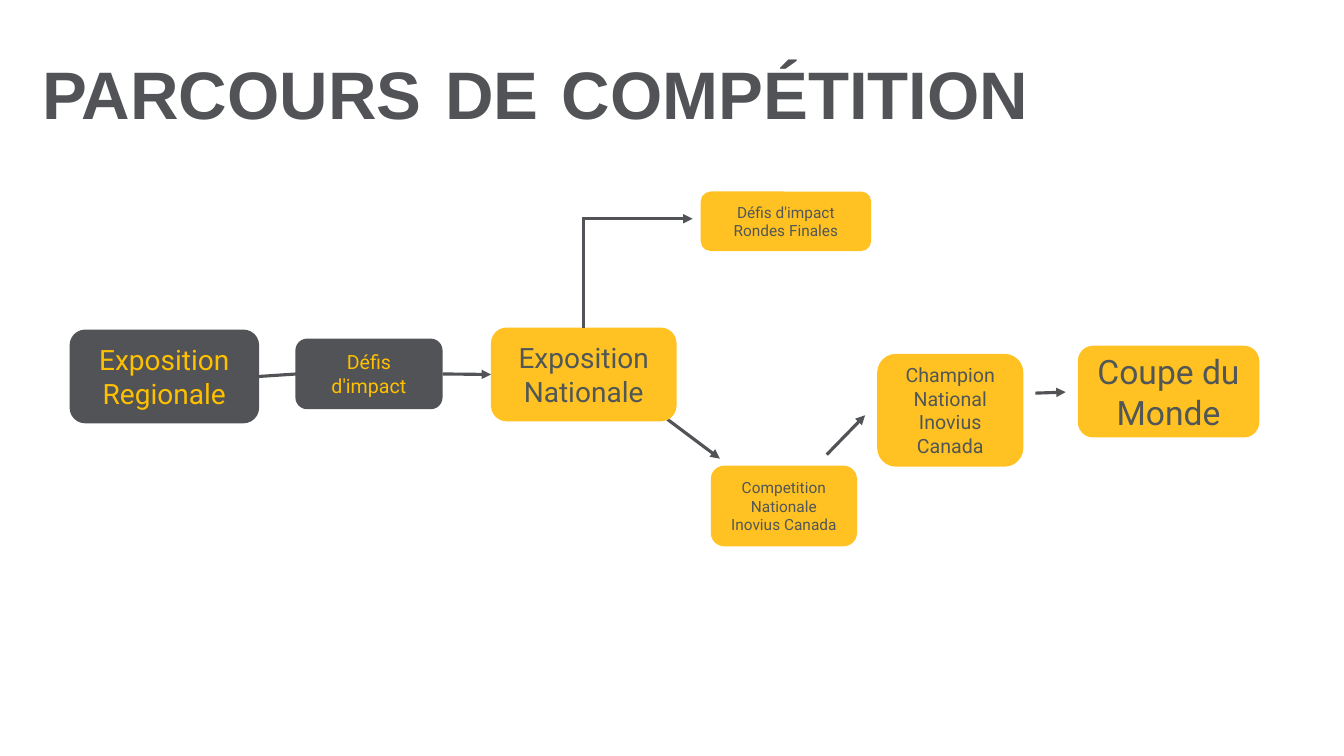
from lxml import etree
from pptx import Presentation
from pptx.dml.color import RGBColor
from pptx.enum.shapes import MSO_CONNECTOR, MSO_SHAPE
from pptx.enum.text import MSO_ANCHOR, PP_ALIGN
from pptx.oxml.ns import qn
from pptx.util import Inches, Pt

ROUNDED = MSO_SHAPE.ROUNDED_RECTANGLE
STRAIGHT = MSO_CONNECTOR.STRAIGHT
MIDDLE = MSO_ANCHOR.MIDDLE
CENTER = PP_ALIGN.CENTER
TOP, LEFT, RIGHT = 0, 1, 3

COLORS = {
    "slate": "515356",
    "yellow": "FFC222",
    "gold": "FFC000",
    "label": "515656",
}
CELL = 0.1  # inches per grid column and row

# Stage: text, column, row, columns wide, rows high, text size
REGIONAL_STAGES = {
    "regional": ("Exposition\nRegionale", 6.9, 32.7, 18.8, 9.3, 20),
    "challenge": ("Défis\nd'impact", 29.3, 33.6, 14.6, 7, 14),
}
NATIONAL_STAGES = {
    "national": ("Exposition\nNationale", 48.7, 32.5, 18.4, 9.3, 20),
    "world_cup": ("Coupe du Monde", 106.9, 34.3, 18, 9.1, 24),
    "competition": ("Competition\nNationale\nInovius Canada",
                    70.5, 46.2, 14.5, 8, 11),
    "finals": ("Défis d'impact\nRondes Finales", 69.5, 19, 16.9, 5.9, 11),
    "champion": ("Champion\nNational\nInovius Canada",
                 87, 35.1, 14.5, 11.2, 14),
}
# Arrows that stand free of the stages: start and end as column, row
FREE_ARROWS = [
    ((66.2, 41.6), (71.4, 45.5)),
    ((82, 45.1), (85.8, 41.2)),
    ((102.7, 39), (105.7, 38.9)),
    ((57.9, 21.7), (68.7, 21.7)),
]


def grid(value):
    return Inches(value * CELL)


def color(name):
    return RGBColor.from_string(COLORS[name])


def style_font(font, name, size, color_name, bold=False):
    font.name = name
    font.size = Pt(size)
    font.bold = bold
    font.color.rgb = color(color_name)


def add_title(slide, words):
    title = slide.shapes.add_textbox(grid(3.2), grid(3.6), grid(120.4), grid(11.2))
    frame = title.text_frame
    frame.word_wrap = True
    frame.vertical_anchor = MIDDLE
    line = frame.paragraphs[0]
    line.line_spacing = 0.9
    for index, word in enumerate(words):
        if index:
            gap = line.add_run()
            gap.text = " "
            style_font(gap.font, "Arial", 60, "slate")
        run = line.add_run()
        run.text = word
        style_font(run.font, "Arial", 48, "slate", bold=True)


def add_stage(slide, stage, fill, text_color):
    text, column, row, width, height, size = stage
    box = slide.shapes.add_shape(
        ROUNDED, grid(column), grid(row), grid(width), grid(height))
    box.shadow.inherit = False
    box.fill.solid()
    box.fill.fore_color.rgb = color(fill)
    box.line.fill.background()
    frame = box.text_frame
    frame.word_wrap = True
    frame.vertical_anchor = MIDDLE
    frame.text = text
    for paragraph in frame.paragraphs:
        paragraph.alignment = CENTER
        for run in paragraph.runs:
            style_font(run.font, "Roboto", size, text_color)
    return box


def add_link(slide, start, end, arrow=True):
    link = slide.shapes.add_connector(STRAIGHT, *map(grid, (*start, *end)))
    link.line.color.rgb = color("slate")
    link.line.width = Pt(2.25)
    if arrow:
        line = link.line._get_or_add_ln()
        etree.SubElement(line, qn("a:tailEnd"), type="triangle")
    etree.SubElement(link._element.spPr, qn("a:effectLst"))
    return link


def main():
    deck = Presentation()
    deck.slide_width, deck.slide_height = Inches(13.33), Inches(7.5)
    slide = deck.slides.add_slide(deck.slide_layouts[6])

    # Free arrows lie behind the stages
    for start, end in FREE_ARROWS:
        add_link(slide, start, end)

    # Stages and heading
    boxes = {}
    for name, stage in NATIONAL_STAGES.items():
        boxes[name] = add_stage(slide, stage, "yellow", "label")
    add_title(slide, ["PARCOURS", "DE", "COMPÉTITION"])
    for name, stage in REGIONAL_STAGES.items():
        boxes[name] = add_stage(slide, stage, "slate", "gold")

    # Links joined to the stages
    to_challenge = add_link(slide, (25.7, 37.3), (30.9, 37))
    to_challenge.begin_connect(boxes["regional"], RIGHT)
    to_national = add_link(slide, (43.9, 37.1), (48.7, 37.1))
    to_national.begin_connect(boxes["challenge"], RIGHT)
    to_national.end_connect(boxes["national"], LEFT)
    to_finals = add_link(slide, (57.9, 32.5), (57.9, 21.5), arrow=False)
    to_finals.begin_connect(boxes["national"], TOP)

    deck.save("out.pptx")


if __name__ == "__main__":
    main()
